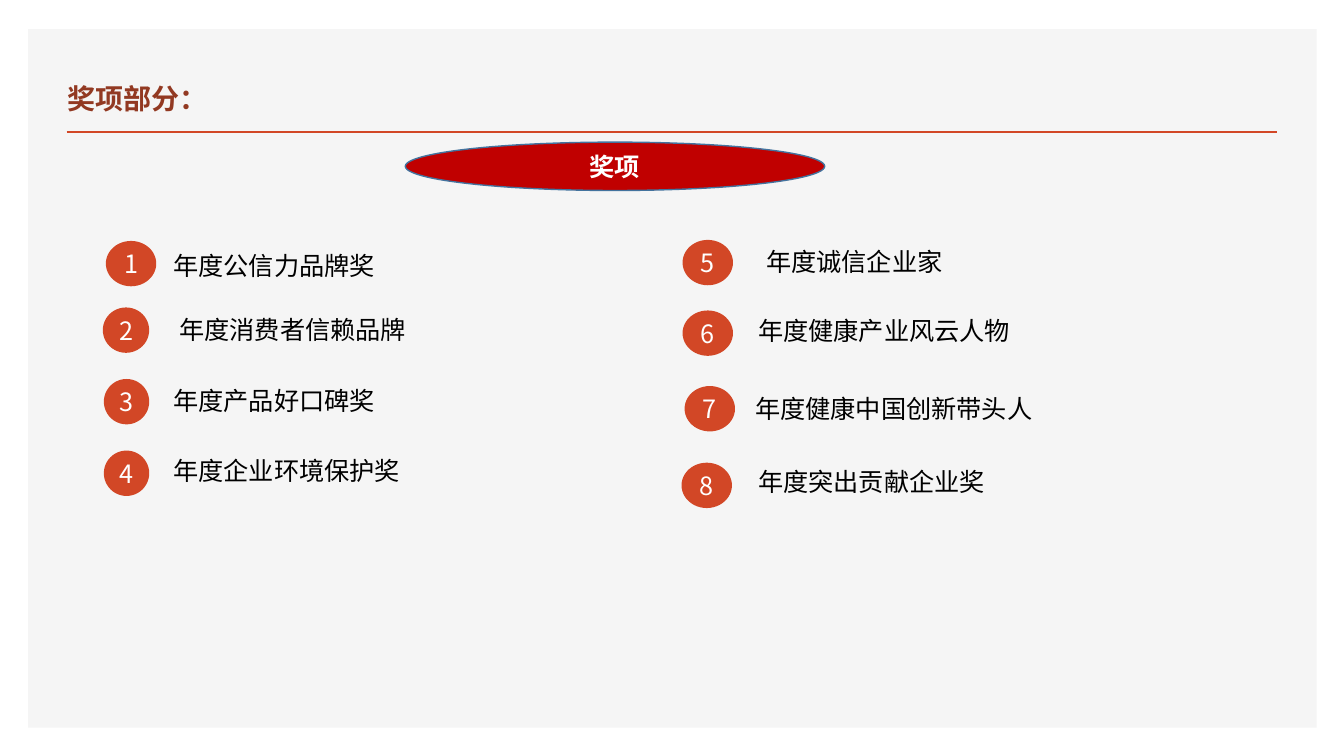
from pptx import Presentation
from pptx.dml.color import RGBColor
from pptx.enum.shapes import MSO_CONNECTOR, MSO_SHAPE
from pptx.enum.text import MSO_ANCHOR, MSO_AUTO_SIZE, PP_ALIGN
from pptx.oxml.ns import qn
from pptx.util import Inches, Pt
from lxml.etree import SubElement

HEADING_FONT = "Noto Sans CJK SC"
BODY_FONT = "Roboto"
ORANGE = "D24726"
WHITE = "FFFFFF"

# Award name, badge (left, top, width), label (left, top, width)
AWARDS = [
    ("年度公信力品牌奖", (1.05, 2.39, 0.5), (1.62, 2.43, 2.97)),
    ("年度消费者信赖品牌", (1.02, 3.05, 0.46), (1.68, 3.07, 2.45)),
    ("年度产品好口碑奖", (1.03, 3.76, 0.45), (1.62, 3.77, 2.56)),
    ("年度企业环境保护奖", (1.03, 4.47, 0.45), (1.62, 4.47, 2.9)),
    ("年度诚信企业家", (6.77, 2.38, 0.5), (7.5, 2.39, 3.5)),
    ("年度健康产业风云人物", (6.77, 3.08, 0.5), (7.42, 3.08, 4.31)),
    ("年度健康中国创新带头人", (6.79, 3.83, 0.5), (7.39, 3.85, 3.62)),
    ("年度突出贡献企业奖", (6.76, 4.59, 0.5), (7.42, 4.58, 2.67)),
]
BADGE_HEIGHT = 0.45
LABEL_HEIGHT = 0.4


def color(hex_value):
    return RGBColor.from_string(hex_value)


def write(shape, text, font, size, hex_value, bold=False,
          align=PP_ALIGN.LEFT, anchor=MSO_ANCHOR.TOP):
    frame = shape.text_frame
    frame.text = text
    frame.word_wrap = True
    frame.auto_size = MSO_AUTO_SIZE.NONE
    frame.vertical_anchor = anchor
    paragraph = frame.paragraphs[0]
    paragraph.alignment = align
    paragraph.font.name = font
    paragraph.font.size = Pt(size)
    paragraph.font.bold = bold
    paragraph.font.color.rgb = color(hex_value)


def add_filled(slide, kind, left, top, width, height, fill, line=None):
    shape = slide.shapes.add_shape(
        kind, Inches(left), Inches(top), Inches(width), Inches(height))
    shape.shadow.inherit = False
    shape.fill.solid()
    shape.fill.fore_color.rgb = color(fill)
    if line:
        shape.line.color.rgb = color(line)
        shape.line.width = Pt(1)
    else:
        shape.line.fill.background()
    return shape


def add_rule(slide, left, right, y):
    rule = slide.shapes.add_connector(
        MSO_CONNECTOR.STRAIGHT, Inches(left), Inches(y), Inches(right), Inches(y))
    rule.line.color.rgb = color(ORANGE)
    rule.line.width = Pt(2)
    SubElement(rule._element.spPr, qn("a:effectLst"))


def add_title(slide, text):
    title = slide.shapes.title
    title.left, title.top = Inches(0.57), Inches(0.49)
    title.width, title.height = Inches(7.52), Inches(0.7)
    write(title, text, HEADING_FONT, 20, "923922", bold=True,
          anchor=MSO_ANCHOR.BOTTOM)


def add_badge(slide, number, left, top, width):
    badge = add_filled(slide, MSO_SHAPE.OVAL, left, top, width, BADGE_HEIGHT, ORANGE)
    write(badge, str(number), HEADING_FONT, 18, WHITE,
          align=PP_ALIGN.CENTER, anchor=MSO_ANCHOR.MIDDLE)
    frame = badge.text_frame
    frame.margin_left = frame.margin_right = 0
    frame.margin_top = frame.margin_bottom = 0


def add_label(slide, text, left, top, width):
    label = slide.shapes.add_textbox(
        Inches(left), Inches(top), Inches(width), Inches(LABEL_HEIGHT))
    write(label, text, BODY_FONT, 18, "000000")


def main():
    prs = Presentation()
    prs.slide_width, prs.slide_height = Inches(13.33), Inches(7.5)
    slide = prs.slides.add_slide(prs.slide_layouts[5])

    # Panel behind the title, and the rule below it
    panel = add_filled(slide, MSO_SHAPE.RECTANGLE, 0.28, 0.29, 12.78, 6.93, "F5F5F5")
    slide.shapes.title._element.addprevious(panel._element)
    add_rule(slide, 0.66, 12.67, 1.31)
    add_title(slide, "奖项部分：")

    # Section banner
    banner = add_filled(slide, MSO_SHAPE.OVAL, 4.02, 1.41, 4.16, 0.48,
                        "C00000", line="43739E")
    write(banner, "奖项", BODY_FONT, 18, WHITE, bold=True,
          align=PP_ALIGN.CENTER, anchor=MSO_ANCHOR.MIDDLE)

    # Numbered awards
    for number, (name, badge_place, label_place) in enumerate(AWARDS, start=1):
        add_badge(slide, number, *badge_place)
        add_label(slide, name, *label_place)

    prs.save("out.pptx")


if __name__ == "__main__":
    main()
